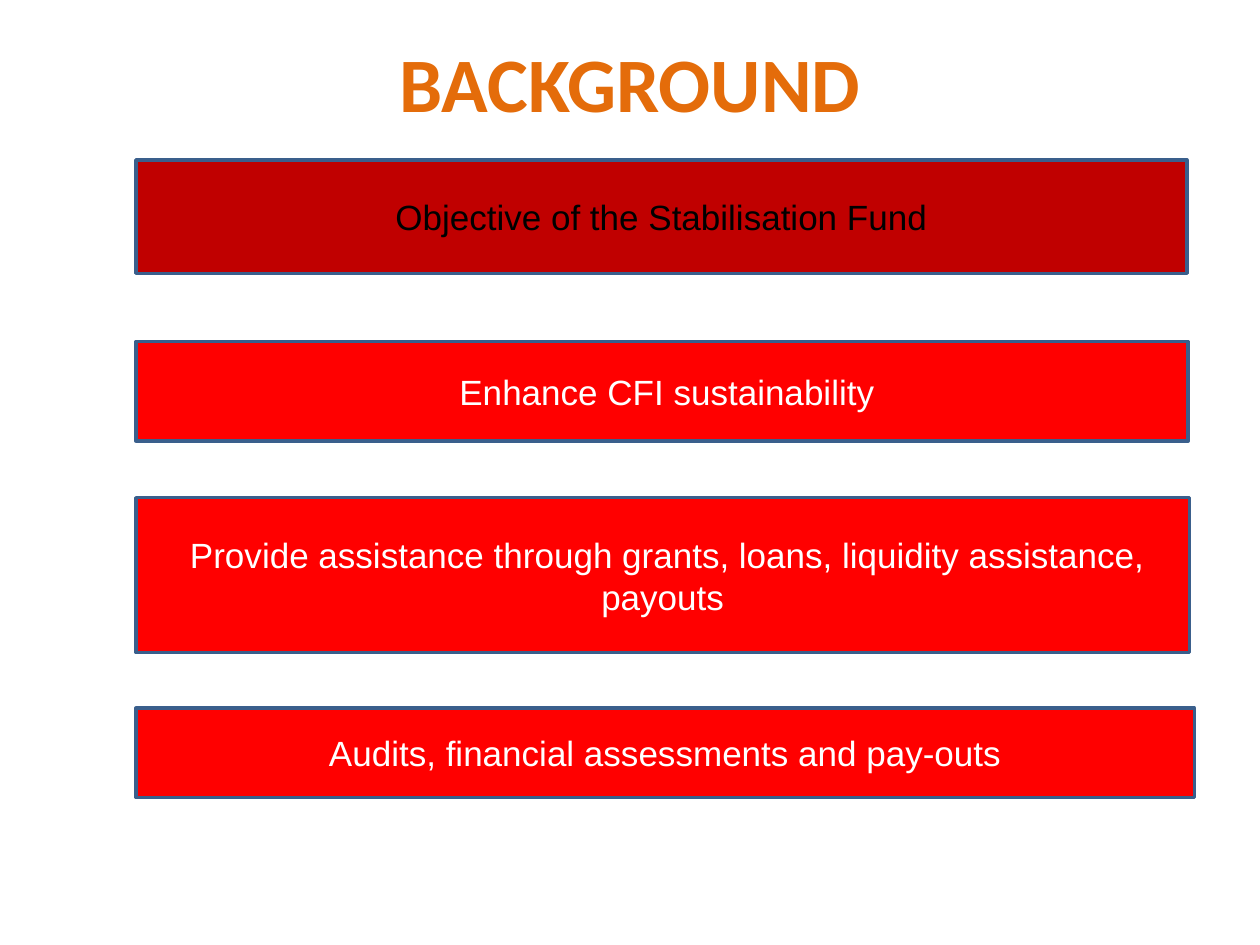
from pptx import Presentation
from pptx.dml.color import RGBColor
from pptx.enum.shapes import MSO_SHAPE
from pptx.enum.text import MSO_ANCHOR, PP_ALIGN
from pptx.util import Inches, Pt

RECT = MSO_SHAPE.RECTANGLE
MIDDLE = MSO_ANCHOR.MIDDLE
CENTER = PP_ALIGN.CENTER
ORANGE = RGBColor(0xE4, 0x6C, 0x0A)
DARK = RGBColor(0xC0, 0x00, 0x00)
RED = RGBColor(0xFF, 0x00, 0x00)
BLUE = RGBColor(0x3A, 0x5F, 0x8C)
WHITE = RGBColor(0xFF, 0xFF, 0xFF)
BLACK = RGBColor(0x00, 0x00, 0x00)

TITLE = "BACKGROUND"
LEFT = 1.08
BARS = [
    ("Objective of the Stabilisation Fund", 1.27, 8.34, 0.9, DARK, BLACK),
    (" Enhance CFI sustainability", 2.71, 8.35, 0.79, RED, WHITE),
    (" Provide assistance through grants, loans, liquidity assistance, payouts",
     3.95, 8.36, 1.23, RED, WHITE),
    ("Audits, financial assessments and pay-outs", 5.62, 8.4, 0.71, RED, WHITE),
]
HEAD = {"name": "Calibri", "size": Pt(44), "bold": True}
BODY = {"name": "Arial", "size": Pt(20), "bold": False}


def write(shape, text, style, color):
    frame = shape.text_frame
    frame.word_wrap = True
    frame.vertical_anchor = MIDDLE
    para = frame.paragraphs[0]
    para.alignment = CENTER
    run = para.add_run()
    run.text = text
    for key, value in style.items():
        setattr(run.font, key, value)
    run.font.color.rgb = color


def add_bar(slide, text, top, width, height, fill, color):
    bar = slide.shapes.add_shape(
        RECT, Inches(LEFT), Inches(top), Inches(width), Inches(height))
    bar.shadow.inherit = False
    bar.fill.solid()
    bar.fill.fore_color.rgb = fill
    bar.line.color.rgb = BLUE
    bar.line.width = Pt(2)
    write(bar, text, BODY, color)


def main():
    deck = Presentation()
    deck.slide_width, deck.slide_height = Inches(10), Inches(7.5)
    slide = deck.slides.add_slide(deck.slide_layouts[5])
    title = slide.shapes.title
    title.left, title.top = Inches(0), Inches(0.02)
    title.width, title.height = Inches(10), Inches(1.26)
    write(title, TITLE, HEAD, ORANGE)
    for bar in BARS:
        add_bar(slide, *bar)
    deck.save("out.pptx")


if __name__ == "__main__":
    main()
